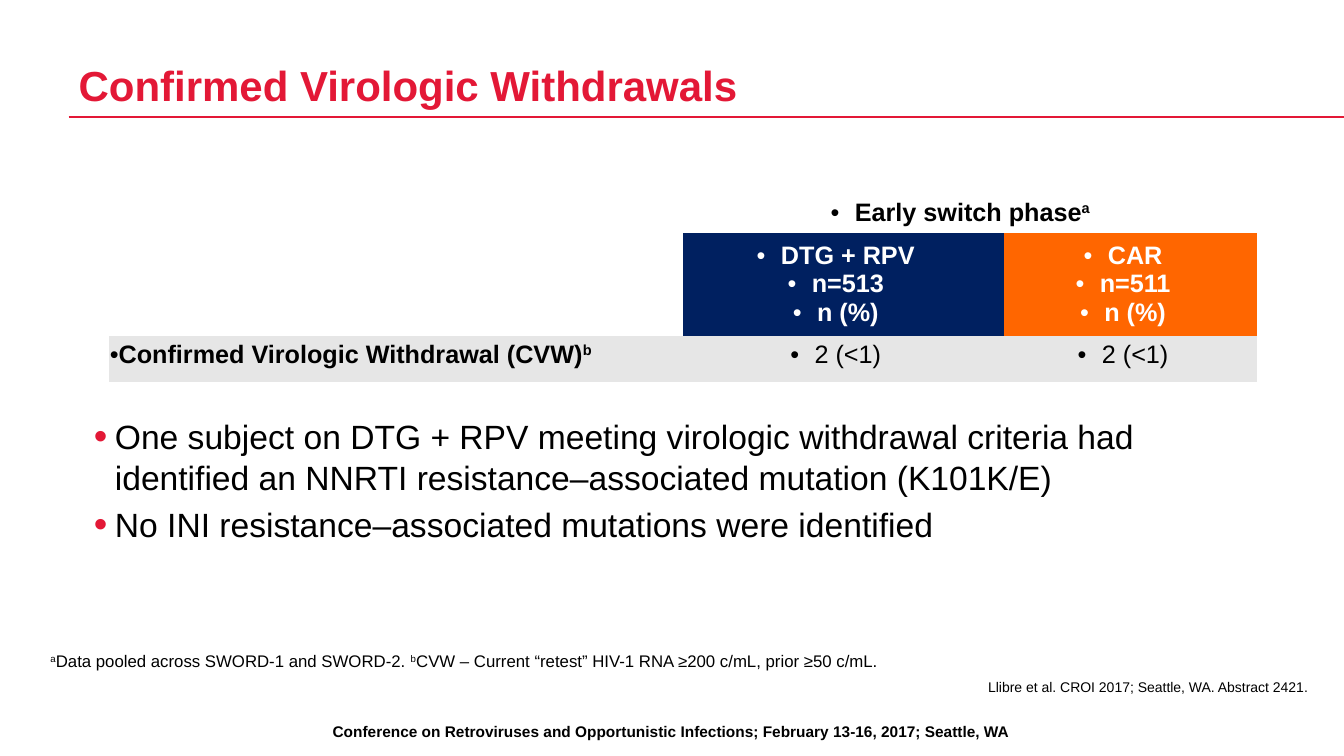
from pptx import Presentation
from pptx.dml.color import RGBColor
from pptx.enum.shapes import MSO_CONNECTOR as Connector
from pptx.enum.text import MSO_ANCHOR as Anchor, PP_ALIGN as Align
from pptx.oxml.ns import qn
from pptx.util import Inches, Pt
from lxml.etree import SubElement

COLORS = {"red": "E31836", "navy": "002060", "orange": "FF6600",
          "grey": "E6E6E6", "black": "000000", "white": "FFFFFF"}
NO_GRID_STYLE = "{2D5ABB26-0587-4C30-8999-92F81FD0307C}"


class SlideBuilder:
    """Draws elements; positions and sizes are percentages of the slide."""
    font = "Arial"

    def __init__(self, deck):
        self.deck = deck
        self.page = deck.slides.add_slide(deck.slide_layouts[6])

    def x(self, share):
        return round(self.deck.slide_width * share / 100)

    def y(self, share):
        return round(self.deck.slide_height * share / 100)

    def color(self, name):
        return RGBColor.from_string(COLORS[name])

    def bullet(self, para, left, hang, color=None, size=None):
        props = para._p.get_or_add_pPr()
        props.set("marL", str(Inches(left)))
        props.set("indent", str(-Inches(hang)))
        if color:
            SubElement(SubElement(props, qn("a:buClr")), qn("a:srgbClr"), val=COLORS[color])
        if size:
            SubElement(props, qn("a:buSzPct"), val=str(size * 1000))
        SubElement(props, qn("a:buFont"), typeface=self.font)
        SubElement(props, qn("a:buChar"), char="•")

    def fill_text(self, frame, lines, size, color="black", bold=False, align=Align.LEFT,
                  after=0, spacing=None, bullet=None):
        """Each line is a list of runs; a run starting with ^ is superscript."""
        for index, runs in enumerate(lines):
            para = frame.paragraphs[0] if index == 0 else frame.add_paragraph()
            if bullet:
                self.bullet(para, **bullet)
            para.alignment = align
            para.space_after = Pt(after)
            if spacing:
                para.line_spacing = Pt(spacing)
            for text in runs:
                span = para.add_run()
                span.text = text.removeprefix("^")
                span.font.name, span.font.size, span.font.bold = self.font, Pt(size), bold
                span.font.color.rgb = self.color(color)
                if text.startswith("^"):
                    span._r.get_or_add_rPr().set("baseline", "30000")

    def text(self, left, top, width, height, lines, size, anchor=Anchor.TOP,
             inset=(0, 0), **style):
        box = self.page.shapes.add_textbox(self.x(left), self.y(top), self.x(width), self.y(height))
        frame = box.text_frame
        frame.word_wrap = True
        frame.vertical_anchor = anchor
        frame.margin_left = frame.margin_right = Inches(inset[0])
        frame.margin_top = frame.margin_bottom = Inches(inset[1])
        self.fill_text(frame, lines, size, **style)

    def rule(self, left, top, right, color, weight):
        line = self.page.shapes.add_connector(
            Connector.STRAIGHT, self.x(left), self.y(top), self.x(right), self.y(top))
        line.line.color.rgb = self.color(color)
        line.line.width = Pt(weight)
        SubElement(line._element.spPr, qn("a:effectLst"))

    def table(self, left, top, columns, rows):
        shape = self.page.shapes.add_table(
            len(rows), len(columns), self.x(left), self.y(top),
            self.x(sum(columns)), self.y(sum(rows)))
        table = shape.table
        table.first_row = table.horz_banding = False
        table._tbl.tblPr.find(qn("a:tableStyleId")).text = NO_GRID_STYLE
        for column, share in zip(table.columns, columns):
            column.width = self.x(share)
        for row, share in zip(table.rows, rows):
            row.height = self.y(share)
        return table

    def cell(self, cell, lines=(), fill=None, inset=(0, 0), anchor=Anchor.TOP, **style):
        cell.margin_left = cell.margin_right = Inches(inset[0])
        cell.margin_top = cell.margin_bottom = Inches(inset[1])
        cell.vertical_anchor = anchor
        if fill:
            cell.fill.solid()
            cell.fill.fore_color.rgb = self.color(fill)
        else:
            cell.fill.background()
        self.fill_text(cell.text_frame, lines, 18, **style)


def main():
    deck = Presentation()
    deck.slide_width, deck.slide_height = Inches(13.33), Inches(7.5)
    slide = SlideBuilder(deck)

    # Footer, title and rule
    slide.text(0.68, 94.8, 98.57, 3.87,
               [["Conference on Retroviruses and Opportunistic Infections; "
                 "February 13-16, 2017; Seattle, WA"]],
               11, inset=(0.1, 0.05), bold=True, align=Align.CENTER)
    slide.rule(5.1, 15.47, 100, "red", 2)
    slide.text(5.85, 2.27, 82.52, 12.27, [["Confirmed Virologic Withdrawals"]],
               30, anchor=Anchor.BOTTOM, color="red", bold=True, spacing=35)

    # Results table
    table = slide.table(8.1, 26.27, [42.69, 23.93, 18.83], [4.53, 12.8, 6.13])
    centred = {"align": Align.CENTER, "bullet": {"left": 0.08, "hang": 0.24}}
    for row in (0, 1):
        slide.cell(table.cell(row, 0))
    table.cell(0, 1).merge(table.cell(0, 2))
    slide.cell(table.cell(0, 1), [["Early switch phase", "^a "]],
               inset=(0.08, 0), bold=True, **centred)
    arms = [("DTG + RPV", "n=513", "navy", "2 (<1)"), ("CAR", "n=511", "orange", "2 (<1)")]
    for column, (arm, count, fill, result) in enumerate(arms, start=1):
        slide.cell(table.cell(1, column), [[arm], [count], ["n (%)"]], fill, (0.01, 0.06),
                   Anchor.MIDDLE, color="white", bold=True, **centred)
        slide.cell(table.cell(2, column), [[result]], "grey", (0.01, 0.05), **centred)
    slide.cell(table.cell(2, 0), [["Confirmed Virologic Withdrawal (CVW)", "^b"]],
               "grey", (0.01, 0.05), bold=True, bullet={"left": 0.08, "hang": 0.08})

    # Findings
    slide.text(6.98, 55.07, 85.22, 15.07,
               [["One subject on DTG + RPV meeting virologic withdrawal criteria had "
                 "identified an NNRTI resistance–associated mutation (K101K/E)"],
                ["No INI resistance–associated mutations were identified"]],
               24, after=5, bullet={"left": 0.21, "hang": 0.21, "color": "red", "size": 115})

    # Footnote and citation
    slide.text(3.75, 86.13, 91.45, 2.67,
               [["^a", "Data pooled across SWORD-1 and SWORD-2. ", "^b",
                 "CVW – Current “retest” HIV-1 RNA ≥200 c/mL, prior ≥50 c/mL."]],
               12, after=3)
    slide.text(5.85, 89.73, 91.45, 2.67,
               [["Llibre et al. CROI 2017; Seattle, WA. Abstract 2421."]],
               10, align=Align.RIGHT, after=5)

    deck.save("out.pptx")


if __name__ == "__main__":
    main()
